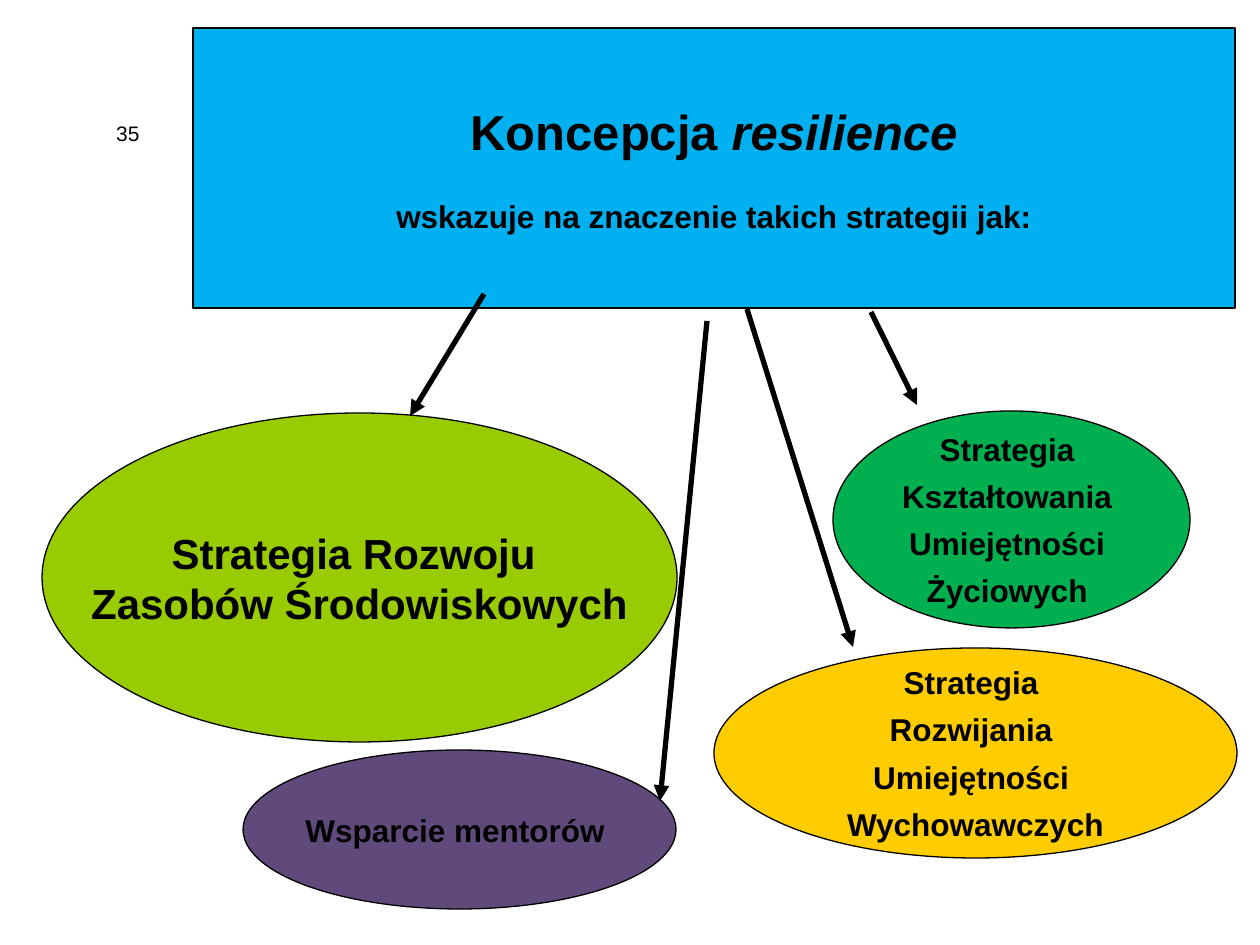
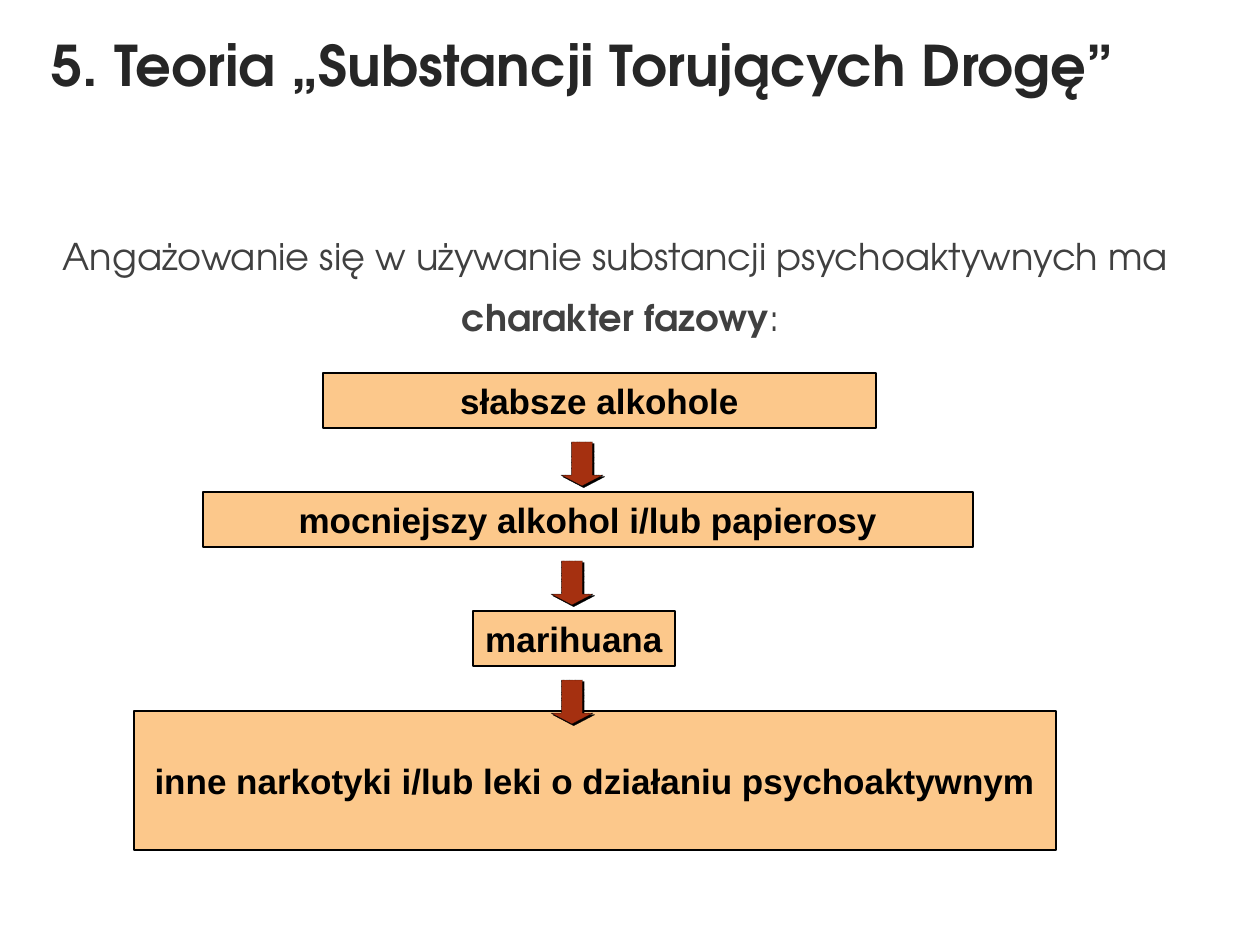
"""Build two slides on resilience strategies and the gateway theory."""
import pptx
import pptx.util
import pptx.dml.color
import pptx.enum.dml
import pptx.enum.shapes
import pptx.enum.text
import pptx.oxml
import pptx.oxml.ns
import lxml.etree

HUES = {
    "black": "000000", "title": "262626", "body": "404040",
    "blue": "00B0F0", "lime": "99CC00", "green": "00B050",
    "gold": "FFCC00", "plum": "604A7B", "peach": "FB9318", "rust": "A53010",
}
SANS, ROUND = "Arial", "TeX Gyre Adventor"
SIZE = (1260, 945)
SCALE = 914400 / 126

PAGE = ("35", (71, 108, 81, 50))
HEAD = {
    "at": (193, 28, 1042, 280),
    "top": [("Koncepcja ", "b"), ("resilience", "bi")],
    "sub": "wskazuje na znaczenie takich strategii jak:",
}
GOALS = [
    ((42, 413, 635, 329), "lime", 24, 0,
     ["Strategia Rozwoju ", "Zasobów Środowiskowych"]),
    ((833, 411, 357, 217), "green", 18, 5.4,
     ["Strategia ", "Kształtowania ", "Umiejętności ", "Życiowych "]),
    ((714, 648, 523, 210), "gold", 18, 5.4,
     ["Strategia ", "Rozwijania ", "Umiejętności ", "Wychowawczych"]),
    ((243, 750, 433, 159), "plum", 18, 0, ["Wsparcie mentorów "]),
]
LINKS = [
    (484, 294, 410, 416), (871, 312, 917, 405),
    (747, 309, 853, 647), (707, 321, 660, 801),
]

TITLE = ("5. Teoria „Substancji Torujących Drogę”", (39, 24, 1163, 176))
BODY = (
    [[("Angażowanie się w używanie substancji psychoaktywnych ma ", "")],
     [("charakter fazowy", "b"), (":", "")]],
    (44, 227, 1153, 637),
)
STEPS = [
    ("słabsze alkohole", 323, 553),
    ("mocniejszy alkohol i/lub papierosy", 203, 770),
    ("marihuana", 473, 202),
]
FIRST, PITCH, TALL = 373, 119, 55
LAST = ("inne narkotyki i/lub leki o działaniu psychoaktywnym", (134, 711, 922, 139))
DROPS, DROP, BELOW = [561, 551, 551], (42, 44), 69

KINDS = pptx.enum.shapes.MSO_SHAPE
ALIGN = pptx.enum.text.PP_ALIGN
ANCHOR = pptx.enum.text.MSO_ANCHOR


def px(*sides):
    return [round(side * SCALE) for side in sides]


def hue(name):
    return pptx.dml.color.RGBColor.from_string(HUES[name])


def child(node, tag, **attrs):
    return lxml.etree.SubElement(node, pptx.oxml.ns.qn(tag), attrs)


def write(shape, paras, size=18, font=SANS, color="black", style="b",
          align=ALIGN.CENTER, anchor=ANCHOR.MIDDLE, gap=0, wrap=False):
    frame = shape.text_frame
    frame.auto_size = pptx.enum.text.MSO_AUTO_SIZE.NONE
    frame.word_wrap, frame.vertical_anchor = wrap, anchor
    for i, runs in enumerate(paras):
        para = frame.add_paragraph() if i else frame.paragraphs[0]
        para.alignment = align
        para.space_before = pptx.util.Pt(gap)
        if isinstance(runs, str):
            runs = [(runs, style)]
        for text, marks in runs:
            run = para.add_run()
            run.text = text
            run.font.name, run.font.size = font, pptx.util.Pt(size)
            run.font.bold, run.font.italic = "b" in marks, "i" in marks
            run.font.color.rgb = hue(color)
    return frame


def draw(slide, kind, at, fill, alpha=None, width=0.75):
    shape = slide.shapes.add_shape(kind, *px(*at))
    shape.shadow.inherit = False
    shape.fill.solid()
    shape.fill.fore_color.rgb = hue(fill)
    if alpha:
        tone = shape.fill._xPr.find(".//" + pptx.oxml.ns.qn("a:srgbClr"))
        child(tone, "a:alpha", val=str(alpha * 1000))
    shape.line.color.rgb = hue("black")
    shape.line.width = pptx.util.Pt(width)
    return shape


def link(slide, ends):
    line = slide.shapes.add_connector(
        pptx.enum.shapes.MSO_CONNECTOR.STRAIGHT, *px(*ends))
    line.line.color.rgb = hue("black")
    line.line.width = pptx.util.Pt(3)
    child(line.line._get_or_add_ln(), "a:tailEnd", type="triangle")
    child(line._element.spPr, "a:effectLst")


def drop(slide, left, top):
    arrow = draw(slide, KINDS.DOWN_ARROW, (left, top, *DROP), "rust", width=0.25)
    arrow.adjustments[0], arrow.adjustments[1] = 0.5, 0.26
    arrow.line.dash_style = pptx.enum.dml.MSO_LINE.ROUND_DOT
    glow = arrow._element.spPr.find(pptx.oxml.ns.qn("a:effectLst"))
    shade = child(glow, "a:outerShdw", dist="17780", dir="2700000")
    child(shade, "a:srgbClr", val=HUES["black"])


def place(shape, at):
    shape.left, shape.top, shape.width, shape.height = px(*at)


def goals(deck):
    slide = deck.slides.add_slide(deck.slide_layouts[6])
    text, at = PAGE
    write(slide.shapes.add_textbox(*px(*at)), [text], size=12, style="",
          align=ALIGN.RIGHT, wrap=True)
    head = draw(slide, KINDS.RECTANGLE, HEAD["at"], "blue")
    frame = write(head, [HEAD["top"], HEAD["sub"]])
    for run in frame.paragraphs[0].runs:
        run.font.size = pptx.util.Pt(28)
    sub = frame.paragraphs[1]
    sub.space_before = pptx.util.Pt(20.7)
    props = sub._p.get_or_add_pPr()
    props.set("marL", "0")
    props.set("indent", str(px(-28)[0]))
    for at, fill, size, gap, lines in GOALS:
        write(draw(slide, KINDS.OVAL, at, fill), lines, size=size, gap=gap)
    for ends in LINKS:
        link(slide, ends)


def phases(deck):
    slide = deck.slides.add_slide(deck.slide_layouts[1])
    title, body = slide.placeholders
    text, at = TITLE
    place(title, at)
    write(title, [text], size=32, font=ROUND, color="title",
          align=ALIGN.LEFT, anchor=ANCHOR.TOP, wrap=True)
    paras, at = BODY
    place(body, at)
    frame = write(body, paras, size=21, font=ROUND, color="body",
                  anchor=ANCHOR.TOP, gap=10, wrap=True)
    for para in frame.paragraphs:
        props = para._p.get_or_add_pPr()
        props.set("marL", "0")
        props.set("indent", "0")
        child(props, "a:buNone")
    boxes = [(text, (left, FIRST + i * PITCH, width, TALL))
             for i, (text, left, width) in enumerate(STEPS)]
    for text, at in boxes + [LAST]:
        write(draw(slide, KINDS.RECTANGLE, at, "peach", alpha=50), [text], size=20)
    for i, left in enumerate(DROPS):
        drop(slide, left, FIRST + i * PITCH + BELOW)


def main():
    deck = pptx.Presentation()
    deck.slide_width, deck.slide_height = px(*SIZE)
    goals(deck)
    phases(deck)
    deck.save("out.pptx")


if __name__ == "__main__":
    main()
